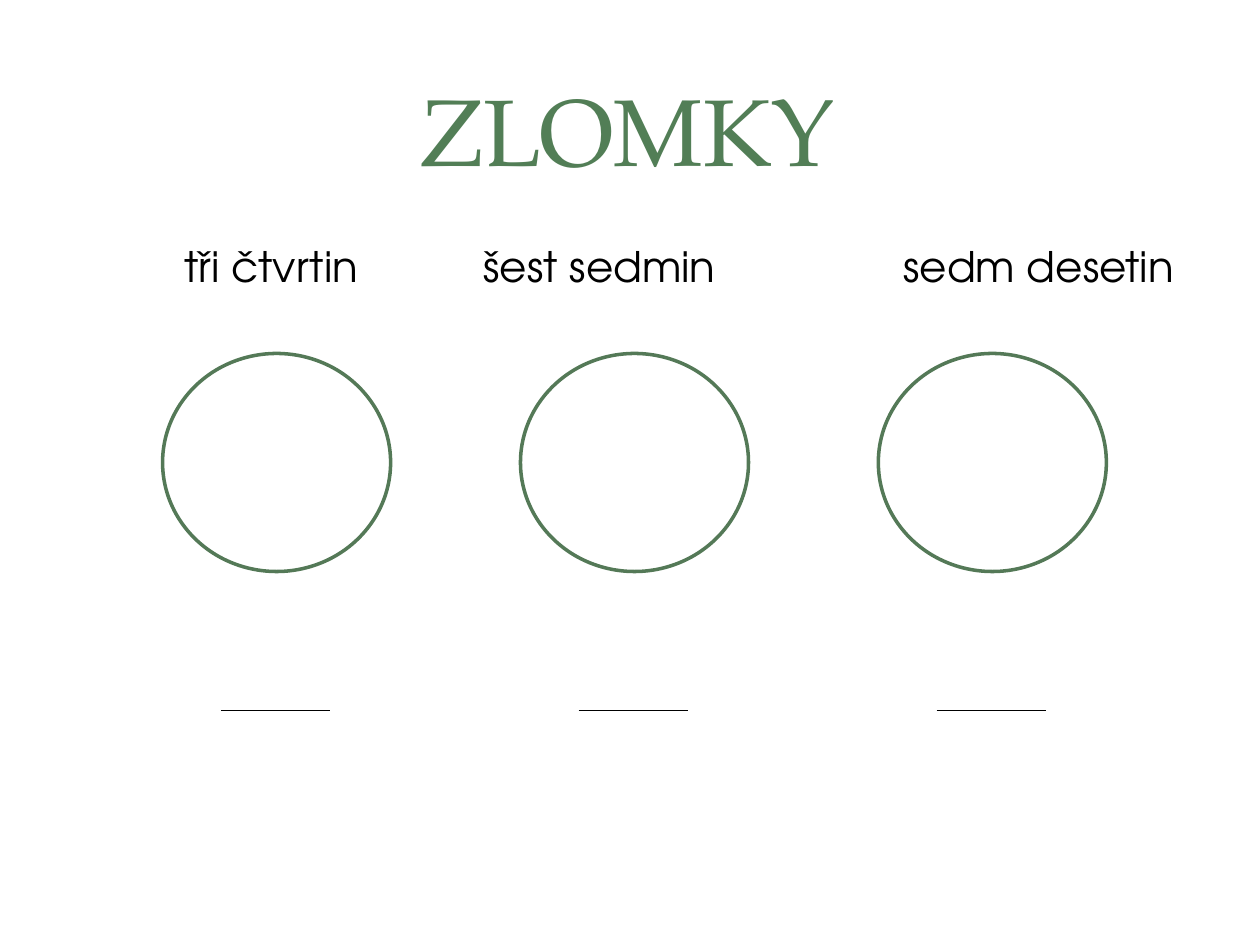
from pptx import Presentation
from pptx.dml.color import RGBColor
from pptx.enum.shapes import MSO_CONNECTOR, MSO_SHAPE
from pptx.enum.text import MSO_ANCHOR, MSO_AUTO_SIZE, PP_ALIGN
from pptx.oxml.ns import qn
from pptx.util import Pt
from lxml import etree

OVAL = MSO_SHAPE.OVAL
LINE = MSO_CONNECTOR.STRAIGHT
MID = MSO_ANCHOR.MIDDLE
LEFT, MIDDLE = PP_ALIGN.LEFT, PP_ALIGN.CENTER
GROW = MSO_AUTO_SIZE.SHAPE_TO_FIT_TEXT

COLORS = {
    "title": "527E56",
    "ring": "547957",
    "white": "FFFFFF",
    "black": "000000",
}


def color(name):
    return RGBColor.from_string(COLORS[name])


def style(par, face, size, name, align):
    par.alignment = align
    for run in par.runs:
        run.font.name = face
        run.font.size = Pt(size)
        run.font.color.rgb = color(name)


deck = Presentation()
deck.slide_width, deck.slide_height = Pt(720), Pt(540)
slide = deck.slides.add_slide(deck.slide_layouts[5])
shapes = slide.shapes

title = shapes.title
title.left, title.top, title.width, title.height = Pt(33.8), Pt(32.4), Pt(650), Pt(82)
title.text_frame.text = "ZLOMKY"
title.text_frame.vertical_anchor = MID
style(title.text_frame.paragraphs[0], "TeX Gyre Pagella", 54, "title", MIDDLE)

step = 204.5
for col in range(3):
    ring = shapes.add_shape(OVAL, Pt(92.9 + col * step), Pt(202), Pt(130.3), Pt(124.6))
    ring.shadow.inherit = False
    ring.fill.solid()
    ring.fill.fore_color.rgb = color("white")
    ring.line.color.rgb = color("ring")
    ring.line.width = Pt(2)

for col in range(3):
    left = 126.2 + col * step
    bar = shapes.add_connector(LINE, Pt(left), Pt(406), Pt(left + 62.5), Pt(406))
    bar.line.color.rgb = color("black")
    bar.line.width = Pt(0.75)
    etree.SubElement(bar.element.spPr, qn("a:effectLst"))

labels = [
    ("tři čtvrtin ", 76.3, 164.2, MIDDLE, True),
    ("šest sedmin", 269.3, 193, LEFT, True),
    (" sedm desetin", 502.6, 177.8, LEFT, False),
]
for text, left, width, align, wrap in labels:
    box = shapes.add_textbox(Pt(left), Pt(133.9), Pt(width), Pt(36))
    frame = box.text_frame
    frame.word_wrap = wrap
    frame.auto_size = GROW
    frame.text = text
    style(frame.paragraphs[0], "TeX Gyre Adventor", 24, "black", align)

deck.save("out.pptx")
